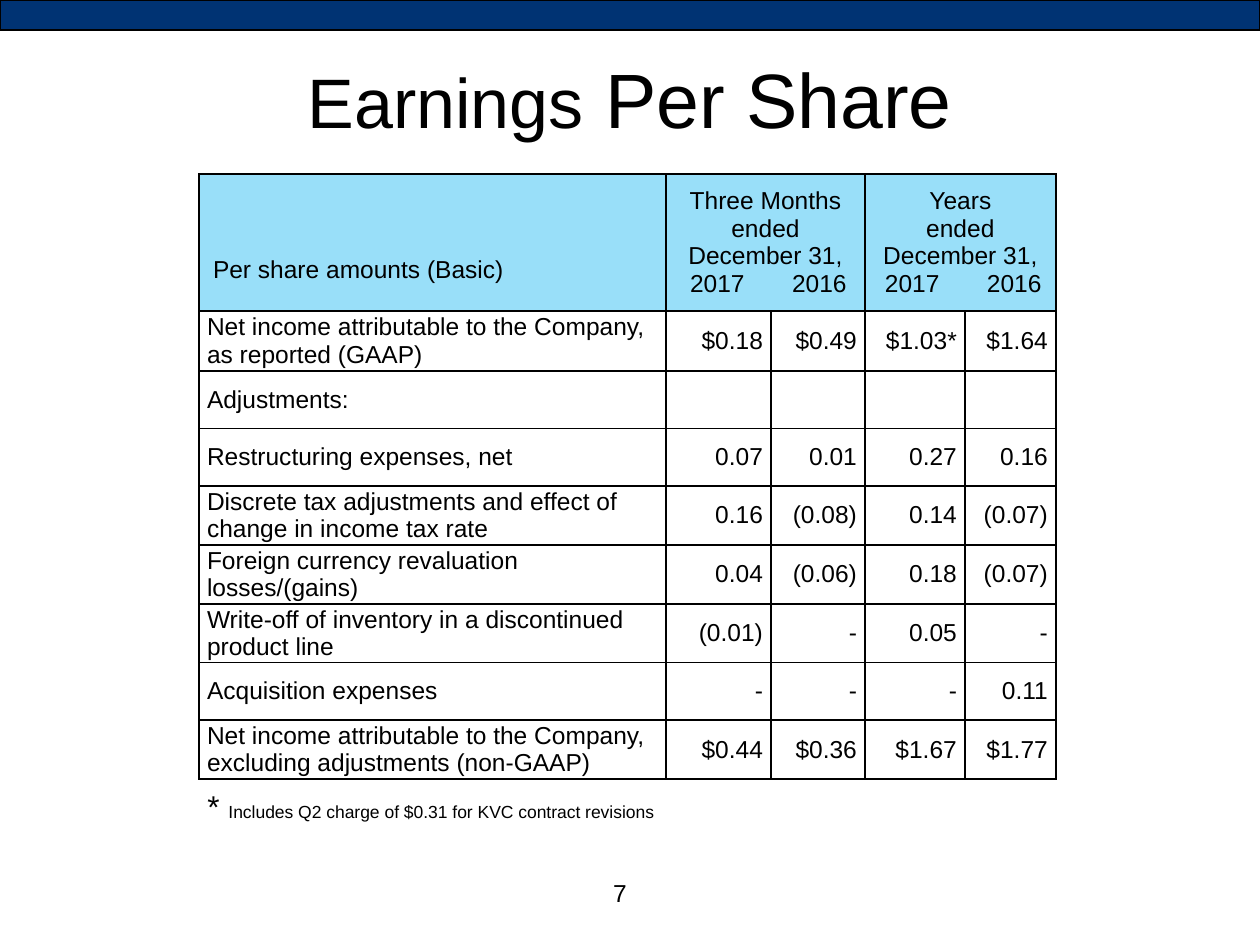
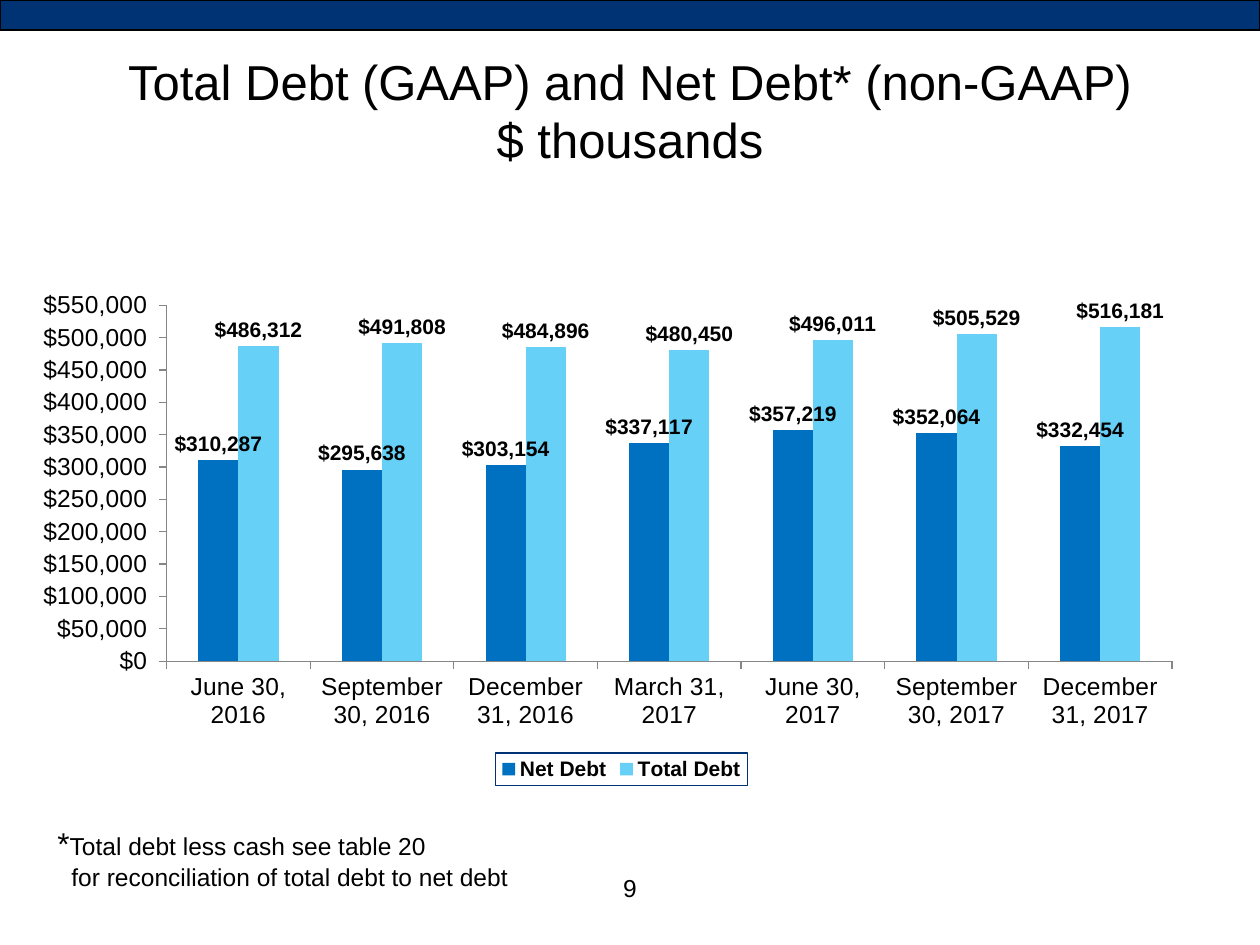
from lxml.etree import SubElement
from pptx import Presentation
from pptx.chart.data import CategoryChartData
from pptx.dml.color import RGBColor
from pptx.enum.chart import XL_CHART_TYPE, XL_LABEL_POSITION, XL_LEGEND_POSITION, XL_TICK_MARK
from pptx.enum.shapes import MSO_SHAPE
from pptx.enum.text import MSO_ANCHOR, PP_ALIGN
from pptx.oxml import parse_xml
from pptx.oxml.ns import nsdecls, qn
from pptx.util import Emu, Pt

FONT = "Arial"
BLACK, NAVY, GREY = "000000", "003373", "868686"
PALE, BLUE, SKY = "99DFF9", "0070C0", "66D0F6"
WIDE, HIGH = 1260, 945
LEFT, MID, RIGHT = PP_ALIGN.LEFT, PP_ALIGN.CENTER, PP_ALIGN.RIGHT

ROWS = [
    ("Net income attributable to the Company, as reported (GAAP)", "$0.18", "$0.49", "$1.03*", "$1.64"),
    ("Adjustments:", "", "", "", ""),
    ("Restructuring expenses, net", "0.07", "0.01", "0.27", "0.16"),
    ("Discrete tax adjustments and effect of change in income tax rate", "0.16", "(0.08)", "0.14", "(0.07)"),
    ("Foreign currency revaluation losses/(gains)", "0.04", "(0.06)", "0.18", "(0.07)"),
    ("Write-off of inventory in a discontinued product line", "(0.01)", "-", "0.05", "-"),
    ("Acquisition expenses", "-", "-", "-", "0.11"),
    ("Net income attributable to the Company, excluding adjustments (non-GAAP)", "$0.44", "$0.36", "$1.67", "$1.77"),
]
DATES = ["June 30, 2016", "September 30, 2016", "December 31, 2016", "March 31, 2017",
         "June 30, 2017", "September 30, 2017", "December 31, 2017"]
DEBT = [
    ("Net Debt", BLUE, (310287, 295638, 303154, 337117, 357219, 352064, 332454)),
    ("Total Debt", SKY, (486312, 491808, 484896, 480450, 496011, 505529, 516181)),
]


def px(size):
    """Turn pixels into EMU."""
    return Emu(round(size * 914400 / 126))


def tint(code):
    """Turn a hex string into a colour."""
    return RGBColor.from_string(code)


def style(font, size, bold=False):
    """Set the shared typeface on a font."""
    font.name, font.size, font.bold = FONT, Pt(size), bold
    font.color.rgb = tint(BLACK)


def write(frame, paras, align=LEFT):
    """Fill a frame with paragraphs, each a list of (text, size) runs."""
    frame.word_wrap = True
    for num, runs in enumerate(paras):
        para = frame.add_paragraph() if num else frame.paragraphs[0]
        para.alignment = align
        for text, size in runs:
            run = para.add_run()
            run.text = text
            style(run.font, size)


def label(slide, box, paras, align=LEFT):
    """Place a text box."""
    frame = slide.shapes.add_textbox(*map(px, box)).text_frame
    write(frame, paras, align)
    return frame


def base(deck, title, page, spot):
    """Add a slide with its band, title and page number."""
    slide = deck.slides.add_slide(deck.slide_layouts[6])
    band = slide.shapes.add_shape(MSO_SHAPE.RECTANGLE, 0, 0, px(WIDE), px(30))
    band.shadow.inherit = False
    band.fill.solid()
    band.fill.fore_color.rgb = tint(NAVY)
    band.line.color.rgb = tint(BLACK)
    band.line.width = Pt(0.75)
    label(slide, (63, 45, WIDE - 126, 150), title, MID)
    label(slide, (*spot, 60, 43), [[(page, 14)]], MID)
    return slide


def trim(cell, fill=None):
    """Set the insets, borders and fill of a cell."""
    cell.margin_left = cell.margin_right = px(8)
    cell.margin_top = cell.margin_bottom = 0
    cell.vertical_anchor = MSO_ANCHOR.MIDDLE
    props = cell._tc.get_or_add_tcPr()
    for side in ("lnL", "lnR", "lnT", "lnB"):
        line = SubElement(props, qn("a:" + side), w=str(Pt(1)))
        SubElement(SubElement(line, qn("a:solidFill")), qn("a:srgbClr"), val=BLACK)
    if fill:
        cell.fill.solid()
        cell.fill.fore_color.rgb = tint(fill)
    else:
        cell.fill.background()


def period(cell, lines, stops):
    """Write a period heading with its two years on tab stops."""
    write(cell.text_frame, [[(line, 14)] for line in lines] + [[("\t2017\t2016", 14)]], MID)
    para = cell.text_frame.paragraphs[-1]
    para.alignment = LEFT
    tabs = SubElement(para._p.get_or_add_pPr(), qn("a:tabLst"))
    for stop in stops:
        SubElement(tabs, qn("a:tab"), pos=str(px(stop)), algn="l")


def grid(slide, box):
    """Build the earnings table in a box."""
    x, y, wide, high = box
    widths = (467, 105, 94, 100, 91)
    heads = (137, 60)
    count = len(ROWS) + 1
    table = slide.shapes.add_table(count, len(widths), *map(px, box)).table
    table.first_row = table.horz_banding = False
    for col, size in zip(table.columns, widths):
        col.width = px(size)
    rest = (high - sum(heads)) / (count - len(heads))
    for num, row in enumerate(table.rows):
        row.height = px(heads[num] if num < len(heads) else rest)
    for num in range(len(widths)):
        trim(table.cell(0, num), PALE)
    for num in (1, 3):
        table.cell(0, num).merge(table.cell(0, num + 1))
    head = table.cell(0, 0)
    head.vertical_anchor = MSO_ANCHOR.BOTTOM
    head.margin_left, head.margin_bottom = px(14), px(27)
    write(head.text_frame, [[("Per share amounts (Basic)", 14)]])
    period(table.cell(0, 1), ["Three Months ended", "December 31,"], (16, 118))
    period(table.cell(0, 3), ["Years", "ended", "December 31,"], (12, 114))
    for down, row in enumerate(ROWS, 1):
        for over, text in enumerate(row):
            cell = table.cell(down, over)
            trim(cell)
            if text:
                write(cell.text_frame, [[(text, 14)]], RIGHT if over else LEFT)


def axis(part, code):
    """Style one chart axis."""
    part.has_major_gridlines = False
    part.major_tick_mark = XL_TICK_MARK.OUTSIDE
    part.minor_tick_mark = XL_TICK_MARK.NONE
    part.format.line.color.rgb = tint(GREY)
    part.format.line.width = Pt(0.75)
    style(part.tick_labels.font, 14)
    part.tick_labels.number_format = code
    part.tick_labels.number_format_is_linked = False


def place(chart, spots):
    """Fix the inner plot area as fractions of the chart."""
    area = chart._chartSpace.chart.plotArea
    for old in area.findall(qn("c:layout")):
        area.remove(old)
    marks = "".join(f'<c:{key}Mode val="edge"/>' for key in "xy")
    marks += "".join(f'<c:{key} val="{val}"/>' for key, val in zip("xywh", spots))
    area.insert(0, parse_xml(
        f'<c:layout {nsdecls("c")}><c:manualLayout><c:layoutTarget val="inner"/>'
        f"{marks}</c:manualLayout></c:layout>"))


def key(chart):
    """Add the framed legend."""
    chart.has_legend = True
    legend = chart.legend
    legend.position = XL_LEGEND_POSITION.BOTTOM
    legend.include_in_layout = False
    style(legend.font, 12, True)
    legend._element.find(qn("c:txPr")).addprevious(parse_xml(
        f'<c:spPr {nsdecls("c", "a")}><a:ln w="{Pt(0.75)}"><a:solidFill>'
        f'<a:srgbClr val="{NAVY}"/></a:solidFill></a:ln></c:spPr>'))


def bars(slide, box):
    """Build the debt chart in a box."""
    data = CategoryChartData()
    data.categories = DATES
    for name, _, vals in DEBT:
        data.add_series(name, vals)
    chart = slide.shapes.add_chart(XL_CHART_TYPE.COLUMN_CLUSTERED, *map(px, box), data).chart
    chart.has_title = False
    style(chart.font, 12, True)
    axis(chart.category_axis, "General")
    axis(chart.value_axis, '"$"#,##0_);[Red]\\("$"#,##0\\)')
    scale = chart.value_axis
    scale.minimum_scale, scale.maximum_scale, scale.major_unit = 0, 550000, 50000
    plot = chart.plots[0]
    plot.gap_width, plot.overlap, plot.vary_by_categories = 158, 0, False
    for line, (_, color, _) in zip(plot.series, DEBT):
        line.format.fill.solid()
        line.format.fill.fore_color.rgb = tint(color)
        tags = line.data_labels
        tags.show_value = True
        tags.position = XL_LABEL_POSITION.OUTSIDE_END
        tags.number_format, tags.number_format_is_linked = '"$"#,##0', False
        style(tags.font, 12, True)
    key(chart)
    place(chart, (0.12, 0.11, 0.84, 0.66))


def share(deck):
    """Build the earnings per share slide."""
    slide = base(deck, [[("Earnings", 40), (" Per Share", 44)]], "7", (590, 872))
    grid(slide, (199, 174, 857, 600))
    label(slide, (195, 781, 483, 50), [
        [("* ", 18), ("Includes Q2 charge of $0.31 for KVC contract revisions", 10)]])


def debt(deck):
    """Build the total and net debt slide."""
    title = ["Total Debt (GAAP) and Net Debt* (non-GAAP)", "$ thousands"]
    slide = base(deck, [[(line, 28)] for line in title], "9", (600, 867))
    bars(slide, (23, 246, 1197, 540))
    note = label(slide, (45, 818, 548, 80), [
        [("*", 18), ("Total debt less cash see table 20", 14)],
        [("for reconciliation of total debt to net debt", 14)]])
    note.paragraphs[1]._p.get_or_add_pPr().set("marL", str(px(14)))


def main():
    """Build and save the deck."""
    deck = Presentation()
    deck.slide_width, deck.slide_height = px(WIDE), px(HIGH)
    share(deck)
    debt(deck)
    deck.save("out.pptx")


if __name__ == "__main__":
    main()
